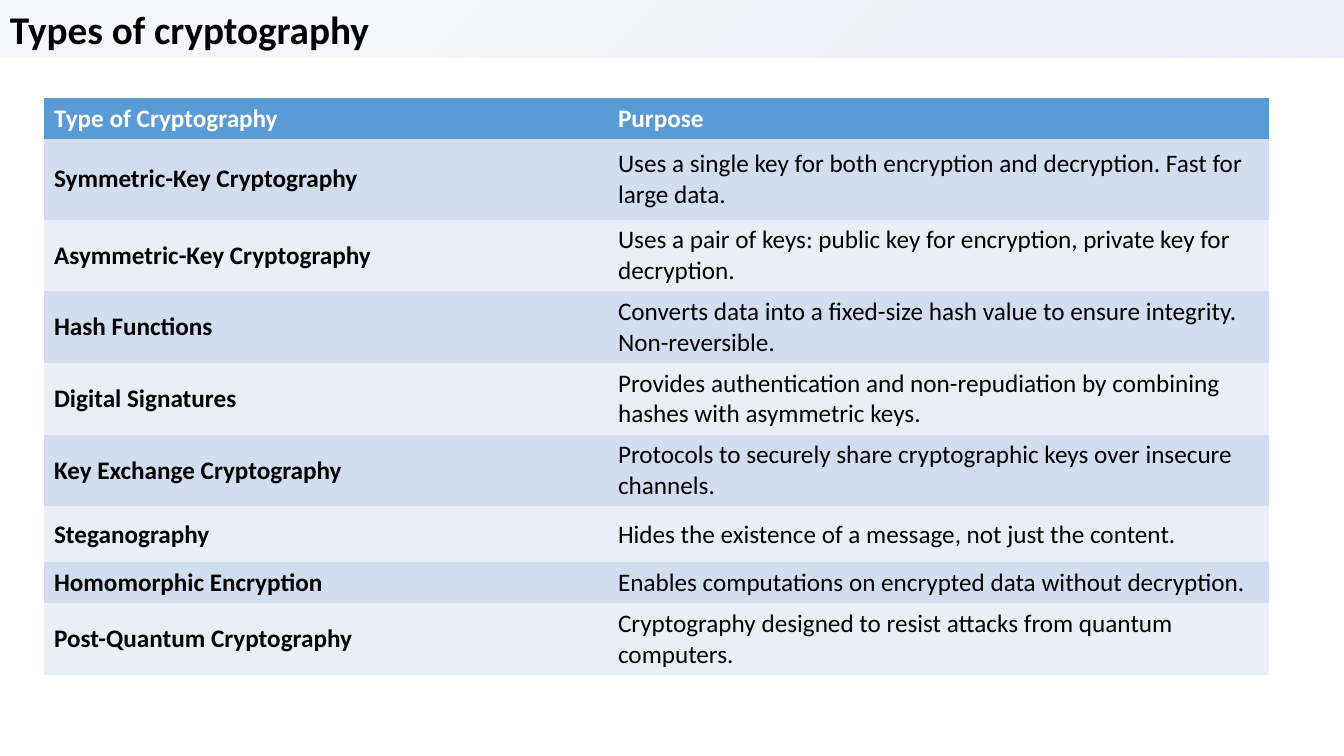
"""Build the slide with the table of cryptography types."""
from lxml import etree
from pptx import Presentation
from pptx.dml.color import RGBColor
from pptx.enum.shapes import MSO_SHAPE as SHAPE
from pptx.enum.text import MSO_ANCHOR as ANCHOR, PP_ALIGN as ALIGN
from pptx.oxml.ns import nsdecls
from pptx.util import Pt

TITLE = "Types of cryptography"
HEADER = ("Type of Cryptography", "Purpose")
TYPES = [
    ("Symmetric-Key Cryptography",
     "Uses a single key for both encryption and decryption. Fast for large data."),
    ("Asymmetric-Key Cryptography",
     "Uses a pair of keys: public key for encryption, private key for decryption."),
    ("Hash Functions",
     "Converts data into a fixed-size hash value to ensure integrity. Non-reversible."),
    ("Digital Signatures",
     "Provides authentication and non-repudiation by combining hashes with asymmetric keys."),
    ("Key Exchange Cryptography",
     "Protocols to securely share cryptographic keys over insecure channels."),
    ("Steganography", "Hides the existence of a message, not just the content."),
    ("Homomorphic Encryption",
     "Enables computations on encrypted data without decryption."),
    ("Post-Quantum Cryptography",
     "Cryptography designed to resist attacks from quantum computers."),
]
COL_WIDTHS = (564, 661)
ROW_HEIGHTS = (40, 81, 70, 70, 70, 70, 56, 40, 70)
HEADER_FILL, BANDS = "5B9BD5", ("D2DEEF", "EAEFF7")
TINT, TINT_STOPS = "4472C4", ((26, 10), (76, 5))
NO_STYLE = "{2D5ABB26-0587-4C30-8999-92F81FD0307C}"


def px(n):
    return round(n * 914400 / 100.8)


def rgb(value):
    return RGBColor.from_string(value)


def write(tf, text, size=18, color="000000", bold=False):
    tf.word_wrap = True
    tf.vertical_anchor = ANCHOR.MIDDLE
    p = tf.paragraphs[0]
    p.alignment = ALIGN.LEFT
    r = p.add_run()
    r.text = text
    r.font.name, r.font.size, r.font.bold = "Calibri", Pt(size), bold
    r.font.color.rgb = rgb(color)


def tint_gradient():
    stops = "".join(
        f'<a:gs pos="{pos * 1000}"><a:srgbClr val="{TINT}">'
        f'<a:alpha val="{alpha * 1000}"/></a:srgbClr></a:gs>'
        for pos, alpha in TINT_STOPS)
    return etree.fromstring(
        f'<a:gradFill {nsdecls("a")} rotWithShape="1"><a:gsLst>{stops}</a:gsLst>'
        '<a:path path="circle"><a:fillToRect l="100000" t="100000"/></a:path>'
        '</a:gradFill>')


def add_title(s):
    sp = s.shapes.add_shape(SHAPE.RECTANGLE, 0, 0, px(1344), px(58))
    sp.shadow.inherit = False
    sp.line.fill.background()
    sp.fill.background()
    no_fill = sp.fill._xPr.find("{*}noFill")
    no_fill.getparent().replace(no_fill, tint_gradient())
    write(sp.text_frame, TITLE, size=28, bold=True)


def add_types_table(s):
    rows = [HEADER, *TYPES]
    frame = s.shapes.add_table(len(rows), len(HEADER), px(44), px(98),
                               px(sum(COL_WIDTHS)), px(sum(ROW_HEIGHTS)))
    table = frame.table
    table._tbl.tblPr.find("{*}tableStyleId").text = NO_STYLE
    for col, width in zip(table.columns, COL_WIDTHS):
        col.width = px(width)
    for i, (texts, height) in enumerate(zip(rows, ROW_HEIGHTS)):
        table.rows[i].height = px(height)
        is_header = i == 0
        for j, text in enumerate(texts):
            cell = table.cell(i, j)
            cell.vertical_anchor = ANCHOR.MIDDLE
            cell.fill.solid()
            cell.fill.fore_color.rgb = rgb(HEADER_FILL if is_header else BANDS[(i - 1) % 2])
            write(cell.text_frame, text, bold=is_header or j == 0,
                  color="FFFFFF" if is_header else "000000")


def main():
    prs = Presentation()
    prs.slide_width, prs.slide_height = px(1344), px(756)
    s = prs.slides.add_slide(prs.slide_layouts[6])
    add_title(s)
    add_types_table(s)
    prs.save("out.pptx")


if __name__ == "__main__":
    main()
